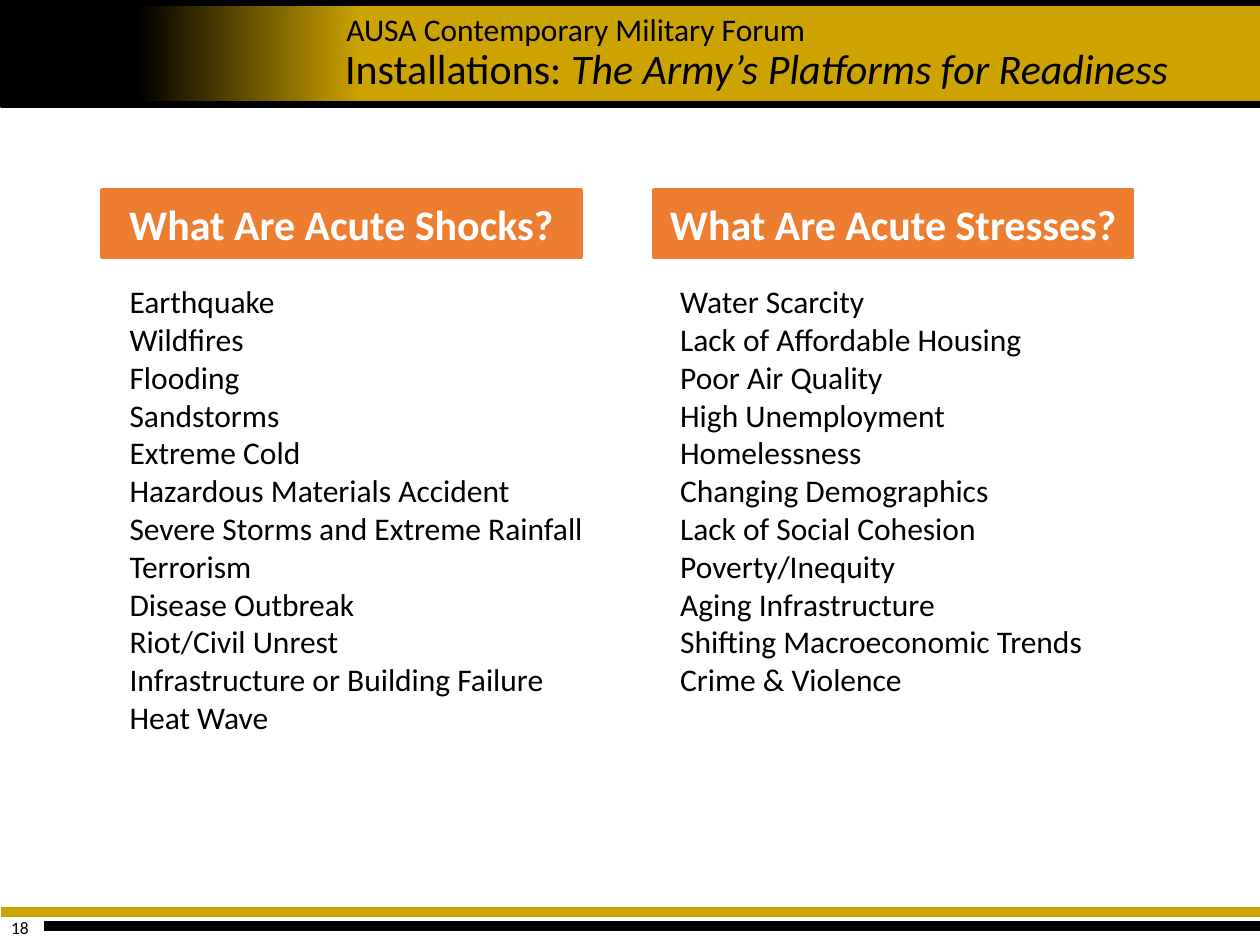
from dataclasses import dataclass

from lxml.etree import SubElement
from pptx import Presentation
from pptx.dml.color import RGBColor as Rgb
from pptx.enum.shapes import MSO_CONNECTOR as Conn, MSO_SHAPE as Kind
from pptx.enum.text import MSO_ANCHOR as Anchor, PP_ALIGN as Align
from pptx.oxml.ns import qn
from pptx.util import Inches, Pt


@dataclass(frozen=True)
class Theme:
    face: str = "Calibri"
    black: Rgb = Rgb(0, 0, 0)
    white: Rgb = Rgb(255, 255, 255)
    gold: Rgb = Rgb(0xCC, 0xA3, 0x00)
    orange: Rgb = Rgb(0xED, 0x7D, 0x31)
    head: int = 24
    body: int = 18
    small: int = 10


@dataclass(frozen=True)
class Box:
    left: float
    top: float
    width: float
    height: float

    def place(self) -> tuple:
        return tuple(map(Inches, (self.left, self.top, self.width, self.height)))


@dataclass(frozen=True)
class Topic:
    title: str
    bar: Box
    list: Box
    items: tuple[str, ...]


@dataclass(frozen=True)
class Rule:
    left: float
    top: float
    color: Rgb


THEME = Theme()
WIDTH, HEIGHT = 10, 7.5

TOPICS = (
    Topic(
        "What Are Acute Shocks?",
        Box(0.81, 1.51, 3.8, 0.53),
        Box(0.93, 2.19, 3.8, 4.04),
        (
            "Earthquake",
            "Wildfires",
            "Flooding",
            "Sandstorms",
            "Extreme Cold",
            "Hazardous Materials Accident",
            "Severe Storms and Extreme Rainfall",
            "Terrorism",
            "Disease Outbreak",
            "Riot/Civil Unrest",
            "Infrastructure or Building Failure",
            "Heat Wave",
        ),
    ),
    Topic(
        "What Are Acute Stresses?",
        Box(5.19, 1.51, 3.8, 0.53),
        Box(5.3, 2.19, 3.7, 3.43),
        (
            "Water Scarcity",
            "Lack of Affordable Housing",
            "Poor Air Quality",
            "High Unemployment",
            "Homelessness",
            "Changing Demographics",
            "Lack of Social Cohesion",
            "Poverty/Inequity",
            "Aging Infrastructure",
            "Shifting Macroeconomic Trends",
            "Crime & Violence",
        ),
    ),
)

RULES = (Rule(0.01, 7.24, THEME.gold), Rule(0.35, 7.35, THEME.black))


def style(run, size: int, **extra) -> None:
    run.font.color.rgb = extra.pop("color", THEME.black)
    look = {"name": THEME.face, "size": Pt(size), **extra}
    for name, value in look.items():
        setattr(run.font, name, value)


def add_text(slide, box: Box, lines: tuple[str, ...], size: int):
    """Add a text box with one paragraph a line; return its text frame."""
    frame = slide.shapes.add_textbox(*box.place()).text_frame
    frame.word_wrap = True
    for i, line in enumerate(lines):
        par = frame.add_paragraph() if i else frame.paragraphs[0]
        run = par.add_run()
        run.text = line
        style(run, size)
    return frame


def add_rect(slide, box: Box):
    rect = slide.shapes.add_shape(Kind.RECTANGLE, *box.place())
    rect.shadow.inherit = False
    return rect


def paint(rect, color: Rgb, line: float) -> None:
    rect.fill.solid()
    rect.fill.fore_color.rgb = color
    rect.line.color.rgb = color
    rect.line.width = Pt(line)


def add_rule(slide, rule: Rule) -> None:
    y = Inches(rule.top)
    line = slide.shapes.add_connector(
        Conn.STRAIGHT, Inches(rule.left), y, Inches(WIDTH), y
    )
    line.line.color.rgb = rule.color
    line.line.width = Pt(6)
    SubElement(line._element.spPr, qn("a:effectLst"))


def add_banner(slide) -> None:
    paint(add_rect(slide, Box(0.01, 0, 9.99, 0.85)), THEME.black, 1)
    fade = add_rect(slide, Box(1.09, 0.05, 8.91, 0.75))
    fade.line.fill.background()
    fade.fill.gradient()
    fade.fill.gradient_angle = 0
    ramp = ((0, THEME.black), (0.2, THEME.gold))
    for stop, (place, color) in zip(fade.fill.gradient_stops, ramp):
        stop.position = place
        stop.color.rgb = color

    forum = ("AUSA Contemporary Military Forum",)
    add_text(slide, Box(2.65, 0.03, 6.98, 0.4), forum, THEME.body)
    title = add_text(
        slide, Box(2.64, 0.29, 6.98, 0.5), ("Installations: ",), THEME.head
    )
    run = title.paragraphs[0].add_run()
    run.text = "The Army’s Platforms for Readiness"
    style(run, THEME.head, italic=True)


def add_topic(slide, topic: Topic) -> None:
    bar = add_rect(slide, topic.bar)
    paint(bar, THEME.orange, 2)
    frame = bar.text_frame
    frame.word_wrap = True
    frame.vertical_anchor = Anchor.MIDDLE
    par = frame.paragraphs[0]
    par.alignment = Align.CENTER
    run = par.add_run()
    run.text = topic.title
    style(run, THEME.head, color=THEME.white, bold=True)
    add_text(slide, topic.list, topic.items, THEME.body)


def main() -> None:
    deck = Presentation()
    deck.slide_width, deck.slide_height = Inches(WIDTH), Inches(HEIGHT)
    slide = deck.slides.add_slide(deck.slide_layouts[6])
    add_banner(slide)
    add_text(slide, Box(-0.01, 7.23, 1.03, 0.27), ("18",), THEME.small)
    for rule in RULES:
        add_rule(slide, rule)
    for topic in TOPICS:
        add_topic(slide, topic)
    deck.save("out.pptx")


if __name__ == "__main__":
    main()
